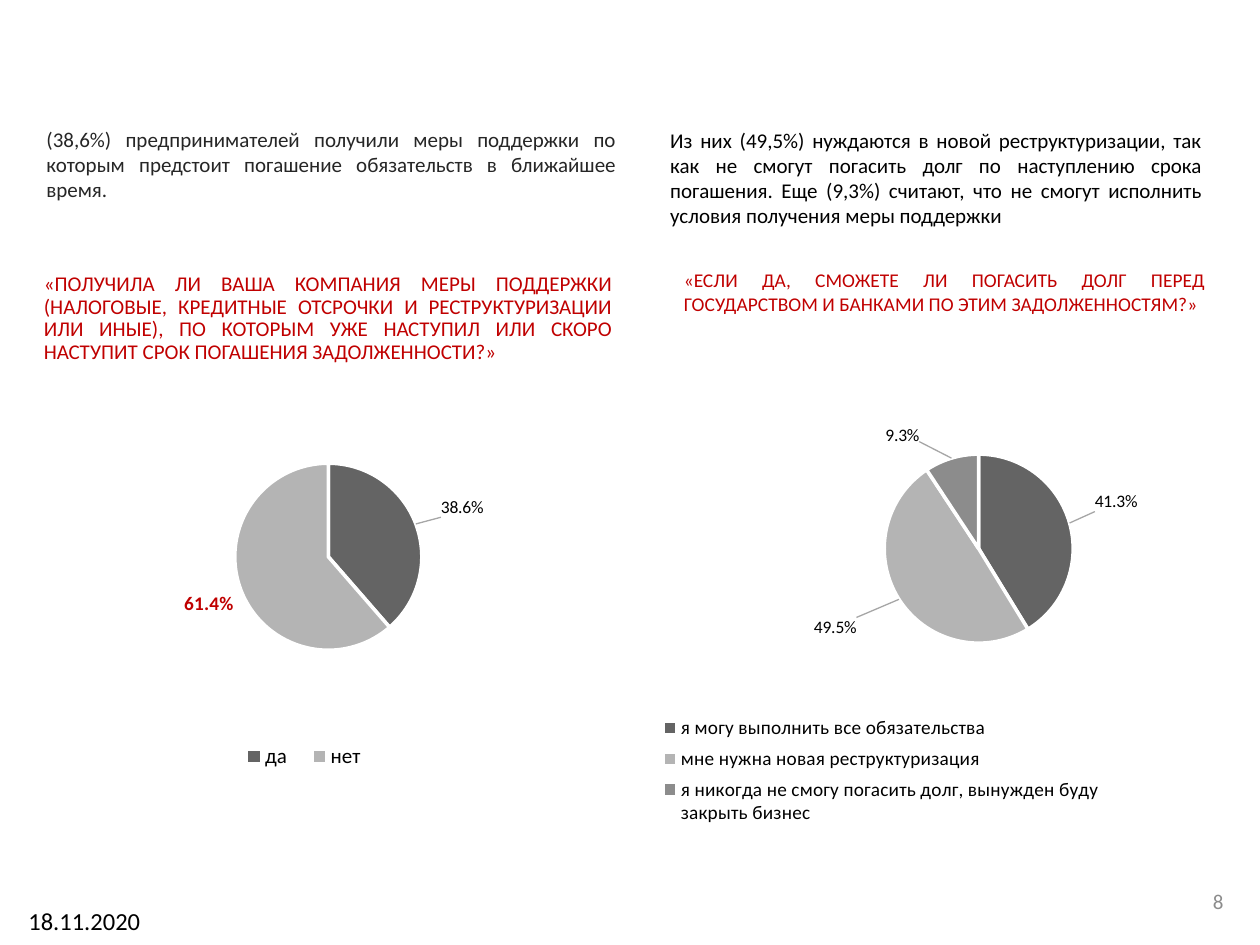
"""Build a slide with two survey pie charts about support measures."""
from lxml.etree import SubElement
from pptx import Presentation
from pptx.chart.data import CategoryChartData
from pptx.dml.color import RGBColor
from pptx.enum.chart import XL_CHART_TYPE as ChartType
from pptx.enum.chart import XL_LABEL_POSITION as LabelPosition
from pptx.enum.chart import XL_LEGEND_POSITION as LegendPosition
from pptx.enum.text import MSO_ANCHOR as Anchor
from pptx.enum.text import PP_ALIGN as Align
from pptx.oxml import parse_xml
from pptx.oxml.ns import nsdecls, qn
from pptx.util import Inches, Pt

FONT = "Calibri"
BLACK = RGBColor(0, 0, 0)
WHITE = RGBColor(255, 255, 255)
RED = RGBColor(0xC0, 0, 0)
CHARCOAL = RGBColor(0x26, 0x26, 0x26)
GREY = RGBColor(0x8C, 0x8C, 0x8C)
SLICES = [RGBColor(0x64, 0x64, 0x64), RGBColor(0xB4, 0xB4, 0xB4), GREY]

prs = Presentation()
prs.slide_width, prs.slide_height = Inches(10), Inches(7.5)
slide = prs.slides.add_slide(prs.slide_layouts[6])


def add_text(text, box, size=12, color=BLACK, align=Align.JUSTIFY,
             anchor=Anchor.TOP, before=2.4, spacing=1.0):
    frame = slide.shapes.add_textbox(*map(Inches, box)).text_frame
    frame.word_wrap = True
    frame.vertical_anchor = anchor
    paragraph = frame.paragraphs[0]
    paragraph.alignment = align
    paragraph.space_before = Pt(before)
    paragraph.line_spacing = spacing
    run = paragraph.add_run()
    run.text = text
    run.font.name, run.font.size = FONT, Pt(size)
    run.font.color.rgb = color


def set_layout(parent, index, target=None, **sizes):
    for old in parent.findall(qn("c:layout")):
        parent.remove(old)
    layout = parse_xml(f"<c:layout {nsdecls('c')}><c:manualLayout/></c:layout>")
    manual = layout[0]
    if target:
        SubElement(manual, qn("c:layoutTarget")).set("val", target)
    if "w" in sizes:
        for mode in ("xMode", "yMode"):
            SubElement(manual, qn(f"c:{mode}")).set("val", "edge")
    for key, value in sizes.items():
        SubElement(manual, qn(f"c:{key}")).set("val", str(value))
    parent.insert(index, layout)


add_text("«ПОЛУЧИЛА ЛИ ВАША КОМПАНИЯ МЕРЫ ПОДДЕРЖКИ (НАЛОГОВЫЕ, КРЕДИТНЫЕ "
         "ОТСРОЧКИ И РЕСТРУКТУРИЗАЦИИ ИЛИ ИНЫЕ), ПО КОТОРЫМ УЖЕ НАСТУПИЛ ИЛИ "
         "СКОРО НАСТУПИТ СРОК ПОГАШЕНИЯ ЗАДОЛЖЕННОСТИ?»",
         (0.25, 2.12, 4.71, 1.1), color=RED, before=10, spacing=0.9)
add_text("8", (7.48, 6.95, 2.33, 0.4), color=GREY, align=Align.RIGHT,
         anchor=Anchor.MIDDLE, before=0)
add_text("(38,6%) предпринимателей получили меры поддержки по которым "
         "предстоит погашение обязательств в ближайшее время.",
         (0.27, 0.96, 4.72, 0.69), color=CHARCOAL, anchor=Anchor.BOTTOM)
add_text("«ЕСЛИ ДА, СМОЖЕТЕ ЛИ ПОГАСИТЬ ДОЛГ ПЕРЕД ГОСУДАРСТВОМ И БАНКАМИ "
         "ПО ЭТИМ ЗАДОЛЖЕННОСТЯМ?»",
         (5.33, 2.08, 4.33, 0.58), size=11.1, color=RED)
add_text("18.11.2020", (0, 7.14, 1.34, 0.36), size=14, align=Align.CENTER)
add_text("Из них (49,5%) нуждаются в новой реструктуризации, так как не "
         "смогут погасить долг по наступлению срока погашения. Еще (9,3%) "
         "считают, что не смогут исполнить условия получения меры поддержки",
         (5.22, 1, 4.42, 0.86), anchor=Anchor.BOTTOM)

support_pie = {
    "box": (0.23, 3.38, 4.8, 3.3),
    "answers": {"да": 0.386, "нет": 0.614},
    "plot": {"x": 0.09, "y": 0.09, "w": 0.81, "h": 0.45},
    "legend": {"x": 0.33, "y": 0.75, "w": 0.25, "h": 0.09},
    "legend_size": 12,
    "label_shifts": {0: (0.03, -0.01)},
}
repayment_pie = {
    "box": (5.08, 3.38, 4.8, 3.75),
    "answers": {
        "я могу выполнить все обязательства": 0.413,
        "мне нужна новая реструктуризация": 0.495,
        "я никогда не смогу погасить долг, вынужден буду закрыть бизнес": 0.093,
    },
    "plot": {"x": 0.2, "y": 0.06, "w": 0.72, "h": 0.4},
    "legend": {"x": 0.01, "y": 0.6, "w": 0.78, "h": 0.26},
    "legend_size": 11,
    "label_shifts": {0: (0.03, -0.02), 1: (-0.06, 0.03), 2: (-0.05, -0.02)},
}

for pie in (support_pie, repayment_pie):
    data = CategoryChartData(number_format="0.0%")
    data.categories = list(pie["answers"])
    data.add_series("Series 1", list(pie["answers"].values()))
    chart = slide.shapes.add_chart(
        ChartType.PIE, *map(Inches, pie["box"]), data).chart
    chart.has_title = False
    chart.font.name, chart.font.size = FONT, Pt(10)
    chart.font.color.rgb = BLACK
    chart.has_legend = True
    chart.legend.position = LegendPosition.BOTTOM
    chart.legend.include_in_layout = False
    chart.legend.font.name = FONT
    chart.legend.font.size = Pt(pie["legend_size"])
    chart.legend.font.color.rgb = BLACK
    set_layout(chart.legend._element, 1, **pie["legend"])
    plot_area = chart._chartSpace.find(f".//{qn('c:plotArea')}")
    set_layout(plot_area, 0, target="inner", **pie["plot"])

    chart.plots[0].vary_by_categories = True
    series = chart.plots[0].series[0]
    for index, color in enumerate(SLICES[:len(pie["answers"])]):
        slice_format = series.points[index].format
        slice_format.fill.solid()
        slice_format.fill.fore_color.rgb = color
        slice_format.line.color.rgb = WHITE
        slice_format.line.width = Pt(2)

    labels = series.data_labels
    labels.show_value = True
    labels.number_format = "0.0%"
    labels.number_format_is_linked = False
    labels.position = LabelPosition.OUTSIDE_END
    labels.font.name, labels.font.size, labels.font.bold = FONT, Pt(11), True
    labels.font.color.rgb = RED
    labels._element.append(parse_xml(
        f"<c:leaderLines {nsdecls('c', 'a')}><c:spPr><a:ln w='9525'><a:solidFill>"
        "<a:srgbClr val='A6A6A6'/></a:solidFill></a:ln></c:spPr></c:leaderLines>"))
    for index, (shift_x, shift_y) in pie["label_shifts"].items():
        series.points[index].data_label.position = LabelPosition.OUTSIDE_END
        label = labels._element.findall(qn("c:dLbl"))[index]
        set_layout(label, 1, x=shift_x, y=shift_y)

prs.save("out.pptx")
